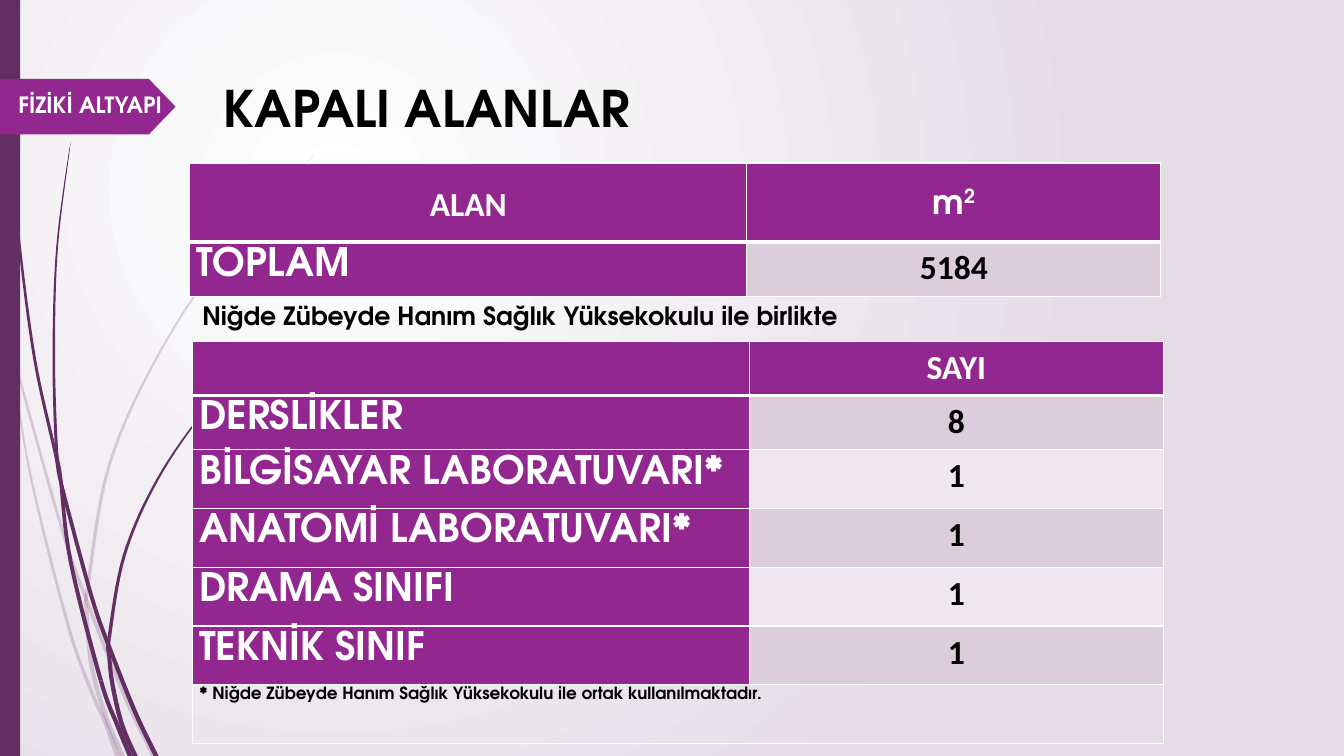
from dataclasses import dataclass

from pptx import Presentation
from pptx import util as u
from pptx.dml.color import RGBColor
from pptx.enum import shapes, text
from pptx.oxml import parse_xml
from pptx.oxml.ns import nsdecls, qn


@dataclass(frozen=True)
class Theme:
    purple: str = "92278F"
    plum: str = "632E62"
    band_dark: str = "DCCDDB"
    band_light: str = "EEE8EE"
    haze: str = "E4DDE6"
    white: str = "FFFFFF"
    black: str = "000000"
    display: str = "TeX Gyre Adventor"
    plain: str = "Calibri"
    title: int = 36
    label: int = 28
    value: int = 24
    note: int = 18
    tag: int = 16
    footnote: int = 12


T = Theme()
COLS, ROWS = 16, 9
CELL = 7.5 / ROWS  # the slide is a grid of 16 x 9 squares
TABLE_COLS = (6.63, 4.93)

# Centre lines of the grass blades in grid units; each blade is a chain of
# stems that meet at the points with the given joint numbers
PALE_BLADES = (
    ((1, 3), [(0, 3.48), (.14, 4.15), (.72, 6.24), (1.04, 7.17), (1.5, 8.32),
              (1.83, 9)]),
    ((3, 4), [(.13, 4.2), (.36, 5.64), (.81, 7.44), (1.1, 8.26), (1.24, 8.57),
              (1.4, 9)]),
    ((4, 5, 7), [(3.74, 1.84), (2.74, 2.94), (1.91, 4.18), (1.3, 5.54),
                 (1.04, 7.03), (1.03, 7.25), (1.09, 7.92), (1.26, 8.53),
                 (1.46, 9)]),
)
DARK_BLADES = (
    ((4, 5, 7), [(.04, 0), (.09, 1.32), (.22, 2.8), (.41, 4.26), (.66, 5.4),
                 (.74, 5.8), (1.09, 7.1), (1.3, 7.7), (1.61, 8.48), (1.86, 9)]),
    ((4, 6, 7), [(.84, 1.69), (.68, 2.94), (.64, 4.19), (.67, 5.3), (.72, 5.68),
                 (.84, 6.68), (1.2, 8.1), (1.4, 8.64), (1.55, 9)]),
    ((4, 5, 7), [(3.13, 4.13), (2.46, 4.86), (1.88, 5.7), (1.48, 6.61),
                 (1.3, 7.6), (1.3, 7.8), (1.34, 8.15), (1.45, 8.62), (1.61, 9)]),
)
ROOMS = (("DERSLİKLER", "8"), ("BİLGİSAYAR LABORATUVARI*", "1"),
         ("ANATOMİ LABORATUVARI*", "1"), ("DRAMA SINIFI", "1"),
         ("TEKNİK SINIF", "1"))


def g(units):
    return u.Inches(units * CELL)


def rgb(color):
    return RGBColor.from_string(color)


def style(p, size, font, color):
    f = p.font
    f.size, f.name, f.bold = u.Pt(size), font, True
    f.color.rgb = rgb(color)


def paint(sp, color):
    sp.shadow.inherit = False
    sp.fill.solid()
    sp.fill.fore_color.rgb = rgb(color)
    sp.line.fill.background()


# Background and decoration
def add_background(s):
    fill = s.background.fill
    fill.gradient()
    for stop, color in zip(fill.gradient_stops, (T.white, T.haze)):
        stop.color.rgb = rgb(color)
    lin = s.background._cSld.find(".//" + qn("a:lin"))
    lin.getparent().replace(lin, parse_xml(
        f'<a:path {nsdecls("a")} path="circle"><a:fillToRect l="50000" '
        't="50000" r="100000" b="100000"/></a:path>'))


def smooth_line(points, steps):
    """Catmull-Rom curve through the points."""
    ends = [points[0], *points, points[-1]]
    curve = []
    for a, b, c, d in zip(ends, ends[1:], ends[2:], ends[3:]):
        for t in (i / steps for i in range(steps)):
            curve.append(tuple(
                (2 * q + (r - p) * t + (2 * p - 5 * q + 4 * r - v) * t ** 2
                 + (3 * q - p - 3 * r + v) * t ** 3) / 2
                for p, q, r, v in zip(a, b, c, d)))
    return curve + [points[-1]]


def add_blade(s, joints, points, alpha=None, width=.06, steps=8):
    curve = smooth_line(points, steps)
    half = [width / 2 * (i / len(curve)) ** .5 for i in range(len(curve))]
    left = [(g(x - h), g(y)) for (x, y), h in zip(curve, half)]
    right = [(g(x + h), g(y)) for (x, y), h in zip(curve, half)]
    cuts = [0, *(j * steps for j in joints), len(curve) - 1]
    for a, b in zip(cuts, cuts[1:]):
        outline = left[a:b + 1] + right[a:b + 1][::-1]
        builder = s.shapes.build_freeform(*outline[0])
        builder.add_line_segments(outline[1:], close=True)
        sp = builder.convert_to_shape()
        paint(sp, T.plum)
        if alpha:
            color = sp._element.spPr.find(".//" + qn("a:srgbClr"))
            color.append(parse_xml(
                f'<a:alpha {nsdecls("a")} val="{alpha * 1000}"/>'))


def add_block(s, kind, box, color):
    sp = s.shapes.add_shape(kind, *map(g, box))
    paint(sp, color)
    return sp


# Text
def add_label(s, box, words, size, color):
    tf = s.shapes.add_textbox(*map(g, box)).text_frame
    tf.word_wrap = True
    tf.text = words
    style(tf.paragraphs[0], size, T.display, color)


def set_title(s, words):
    sp = s.shapes.title
    sp.left, sp.top, sp.width, sp.height = map(g, (2.03, .86, 12.67, 1.46))
    tf = sp.text_frame
    tf.text, tf.word_wrap = words, True
    tf.vertical_anchor = text.MSO_ANCHOR.TOP
    tf.margin_left = g(.63)
    p = tf.paragraphs[0]
    p.alignment = text.PP_ALIGN.LEFT
    style(p, T.title, T.display, T.black)


# Tables
def add_grid(s, left, top, heights):
    table = s.shapes.add_table(len(heights), len(TABLE_COLS), g(left), g(top),
                               g(sum(TABLE_COLS)), g(sum(heights))).table
    table.horz_banding = False
    for col, width in zip(table.columns, TABLE_COLS):
        col.width = g(width)
    for row, height in zip(table.rows, heights):
        row.height = g(height)
    return table


def format_cell(cell, words, fill, size, font, color, header=False,
                align=text.PP_ALIGN.CENTER):
    tcPr = cell._tc.get_or_add_tcPr()
    for side in "LRTB":
        width = u.Pt(3 if header and side == "B" else 1)
        tcPr.append(parse_xml(
            f'<a:ln{side} {nsdecls("a")} w="{width}"><a:solidFill>'
            f'<a:srgbClr val="{T.white}"/></a:solidFill></a:ln{side}>'))
    if fill:
        cell.fill.solid()
        cell.fill.fore_color.rgb = rgb(fill)
    else:
        cell.fill.background()
    if not words:
        return
    cell.margin_left = cell.margin_right = u.Inches(.07)
    cell.margin_top = cell.margin_bottom = 0
    cell.text = words
    p = cell.text_frame.paragraphs[0]
    p.alignment, p.line_spacing = align, 1.15
    style(p, size, font, color)


def header_cell(cell, words, font=T.plain):
    format_cell(cell, words, T.purple, T.value, font, T.white, header=True)


def data_row(table, i, name, value):
    format_cell(table.cell(i, 0), name, T.purple, T.label, T.display, T.white,
                align=text.PP_ALIGN.JUSTIFY)
    format_cell(table.cell(i, 1), value, T.band_dark if i % 2 else T.band_light,
                T.value, T.plain, T.black)


def add_area_table(s):
    table = add_grid(s, 2.26, 1.94, (.94, .65))
    area, unit = table.cell(0, 0), table.cell(0, 1)
    header_cell(area, "ALAN")
    header_cell(unit, "m", T.display)
    area.vertical_anchor = unit.vertical_anchor = text.MSO_ANCHOR.MIDDLE
    r = unit.text_frame.paragraphs[0].add_run()
    r.text = "2"
    r._r.get_or_add_rPr().set("baseline", "30000")
    data_row(table, 1, "TOPLAM", "5184")


def add_room_table(s):
    table = add_grid(s, 2.29, 4.07, (.64,) * 2 + (.7,) * 5)
    header_cell(table.cell(0, 0), "")
    header_cell(table.cell(0, 1), "SAYI")
    for i, (name, count) in enumerate(ROOMS, 1):
        data_row(table, i, name, count)
    last = len(ROOMS) + 1
    table.cell(last, 0).merge(table.cell(last, 1))
    format_cell(
        table.cell(last, 0),
        "* Niğde Zübeyde Hanım Sağlık Yüksekokulu ile ortak kullanılmaktadır.",
        None, T.footnote, T.display, T.black, align=text.PP_ALIGN.JUSTIFY)
    format_cell(table.cell(last, 1), "", None, T.footnote, T.display, T.black)


def main():
    prs = Presentation()
    prs.slide_width, prs.slide_height = g(COLS), g(ROWS)
    s = prs.slides.add_slide(prs.slide_layouts[5])
    add_background(s)
    for alpha, blades in ((20, PALE_BLADES), (None, DARK_BLADES)):
        for joints, points in blades:
            add_blade(s, joints, points, alpha)
    add_block(s, shapes.MSO_SHAPE.RECTANGLE, (0, 0, .24, ROWS), T.plum)
    tag = add_block(s, shapes.MSO_SHAPE.PENTAGON, (0, .94, 2.09, .66), T.purple)
    tag.adjustments[0] = .48
    add_label(s, (.1, 1.03, 2.36, .44), "FİZİKİ ALTYAPI", T.tag, T.white)
    set_title(s, "KAPALI ALANLAR")
    add_area_table(s)
    add_room_table(s)
    add_label(s, (2.29, 3.52, 11.68, .48),
              "Niğde Zübeyde Hanım Sağlık Yüksekokulu ile birlikte",
              T.note, T.black)
    prs.save("out.pptx")


if __name__ == "__main__":
    main()
